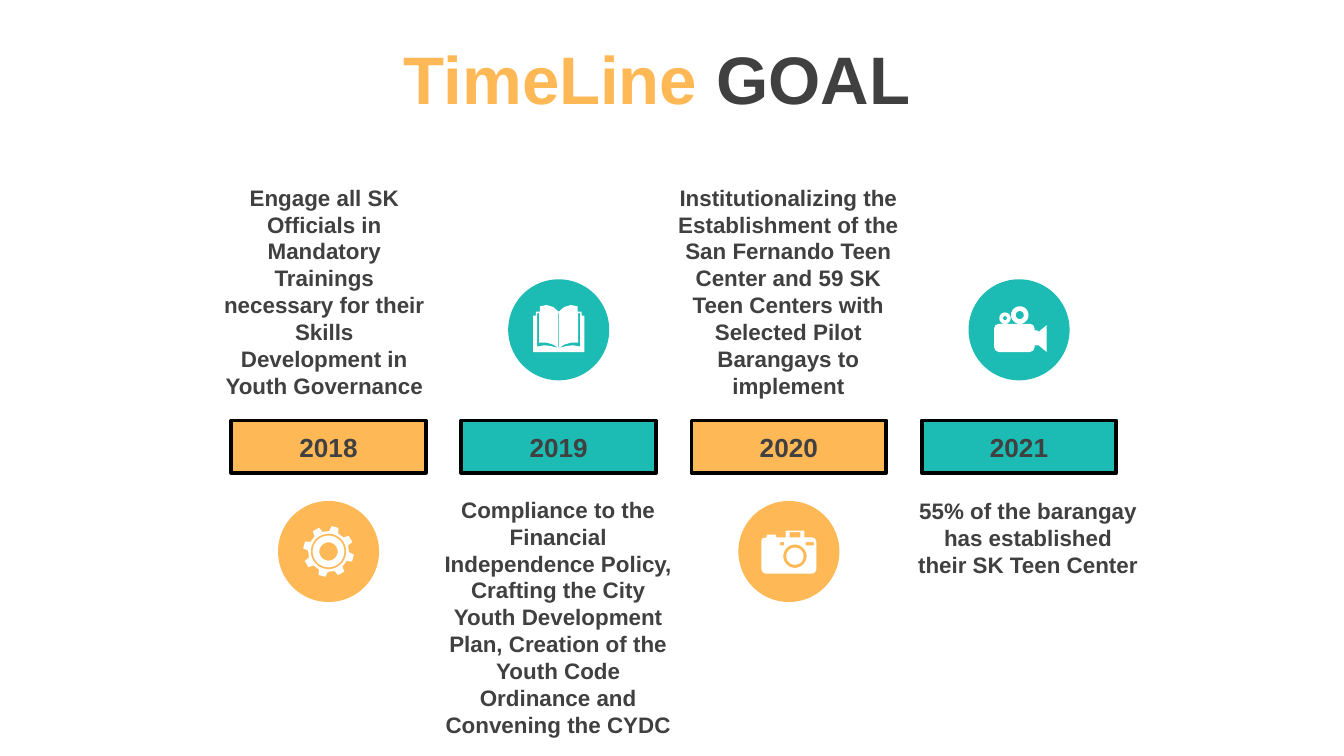
from math import cos, radians, sin

from pptx import Presentation
from pptx.dml.color import RGBColor
from pptx.enum.shapes import MSO_SHAPE
from pptx.enum.text import MSO_ANCHOR, MSO_AUTO_SIZE, PP_ALIGN
from pptx.util import Cm, Pt

RECTANGLE, OVAL = MSO_SHAPE.RECTANGLE, MSO_SHAPE.OVAL
TOP, MIDDLE = MSO_ANCHOR.TOP, MSO_ANCHOR.MIDDLE
CENTER = PP_ALIGN.CENTER
FIT_SHAPE = MSO_AUTO_SIZE.SHAPE_TO_FIT_TEXT

ORANGE = RGBColor(0xFE, 0xB8, 0x56)
TEAL = RGBColor(0x1C, 0xBB, 0xB4)
GRAY = RGBColor(0x40, 0x40, 0x40)
BLACK = RGBColor(0, 0, 0)
WHITE = RGBColor(0xFF, 0xFF, 0xFF)

# Column grid, in cm
FIRST_LEFT, COLUMN_STEP = 4.37, 4.35
YEAR_TOP, YEAR_WIDTH, YEAR_HEIGHT = 7.95, 3.68, 0.99
DISC_SIZE, UPPER_DISC_TOP, LOWER_DISC_TOP = 1.91, 5.28, 9.47
ICON_UNIT = 0.0254  # icon outlines count in this unit from the disc centre


def write_text(text_frame, runs, size=12, anchor=TOP):
    """Write one centred bold paragraph from (text, color) pairs."""
    text_frame.word_wrap = True
    text_frame.vertical_anchor = anchor
    paragraph = text_frame.paragraphs[0]
    paragraph.alignment = CENTER
    for text, color in runs:
        run = paragraph.add_run()
        run.text = text
        run.font.name = "Arial"
        run.font.size = Pt(size)
        run.font.bold = True
        run.font.color.rgb = color


def paint(shape, fill, line=None):
    shape.shadow.inherit = False
    shape.fill.solid()
    shape.fill.fore_color.rgb = fill
    if line is None:
        shape.line.fill.background()
    else:
        shape.line.color.rgb = line
        shape.line.width = Pt(2)


def add_title(slide):
    title = slide.shapes.title
    title.left, title.top = Cm(-0.28), Cm(0.38)
    title.width, title.height = Cm(25.4), Cm(2.16)
    write_text(title.text_frame, [("TimeLine", ORANGE), (" GOAL", GRAY)],
               size=36, anchor=MIDDLE)


def add_year(slide, left, year, color):
    shape = slide.shapes.add_shape(RECTANGLE, Cm(left), Cm(YEAR_TOP),
                                   Cm(YEAR_WIDTH), Cm(YEAR_HEIGHT))
    paint(shape, color, line=BLACK)
    write_text(shape.text_frame, [(year, GRAY)], size=14, anchor=MIDDLE)


def add_goal(slide, text, left, top, width, height):
    box = slide.shapes.add_textbox(Cm(left), Cm(top), Cm(width), Cm(height))
    write_text(box.text_frame, [(text, GRAY)])
    box.text_frame.auto_size = FIT_SHAPE


def add_icon(slide, center_x, top, color, contours):
    """Add a disc with a white icon; nested contours become holes."""
    disc = slide.shapes.add_shape(OVAL, Cm(center_x - DISC_SIZE / 2), Cm(top),
                                  Cm(DISC_SIZE), Cm(DISC_SIZE))
    paint(disc, color)
    builder = None
    for contour in contours:
        points = [(Cm(x * ICON_UNIT), Cm(y * ICON_UNIT)) for x, y in contour]
        if builder is None:
            builder = slide.shapes.build_freeform(*points[0])
        else:
            builder.move_to(*points[0])
        builder.add_line_segments(points[1:], close=True)
    icon = builder.convert_to_shape(Cm(center_x), Cm(top + DISC_SIZE / 2))
    paint(icon, WHITE)


# Icon outlines
def circle(x, y, radius):
    return [(x + radius * cos(radians(angle)), y + radius * sin(radians(angle)))
            for angle in range(0, 360, 10)]


def box(left, top, right, bottom):
    return [(left, top), (right, top), (right, bottom), (left, bottom)]


def mirrored(points):
    return [(-x, y) for x, y in reversed(points)]


def gear():
    profile = [(-13, 15.2), (-8, 19), (8, 19), (13, 15.2)]
    teeth = [(radius * cos(radians(tooth + offset)),
              radius * sin(radians(tooth + offset)))
             for tooth in range(-75, 285, 45) for offset, radius in profile]
    return [teeth] + [circle(0, 0, radius) for radius in (13.2, 11.8, 6.8)]


def book():
    half = [(0, -13.5), (4, -17), (9, -18.5), (14, -17.5), (14, -13.5),
            (17, -13.5), (17, -10.5), (19, -10.5), (19, 16.5)]
    page_edge = [(0.5, 13.5), (6, 12), (11, 11.5), (16, 12.5), (16, -12.5),
                 (14.5, -12.5), (14.5, 9.5), (9, 9.5), (4, 11)]
    spine = box(-0.3, -12.5, 0.3, 13)
    return [half + mirrored(half), page_edge, mirrored(page_edge), spine]


def camera():
    body = [(-20.5, -8), (-19.5, -10), (-16.5, -10.5), (-16.5, -12.5),
            (-9.5, -12.5), (-9.5, -10.5), (-2.5, -10.5), (-2.5, -15.5),
            (11.5, -15.5), (11.5, -10.5), (17.5, -10.5), (19.5, -9.5),
            (20.5, -7), (20.5, 13), (19.5, 15.5), (17.5, 16.5),
            (-17.5, 16.5), (-19.5, 15.5), (-20.5, 13)]
    return [body, circle(4.5, 3.5, 8.7), circle(4.5, 3.5, 6.4),
            box(0.5, -14.5, 8.5, -10.5), box(-6.5, -7, -3.5, -4.5),
            box(12.5, -7, 18.5, -4.5)]


def video_camera():
    body = [(-18.5, -1.5), (-17.5, -3.5), (-15, -4.5), (8, -4.5),
            (10.5, -3.5), (11.5, -1), (11.5, 0.5), (13.5, 0.5), (14.5, 1.5),
            (20.5, -3.5), (20.5, 16.5), (14.5, 11.5), (11.5, 11.5),
            (11.5, 13), (10.5, 15.5), (8, 16.5), (-15, 16.5),
            (-17.5, 15.5), (-18.5, 13)]
    return [body, circle(-10.5, -8.7, 4.2), circle(-10.5, -8.7, 1.5),
            circle(0.5, -11, 6.5), circle(0.5, -11, 3)]


# Year, icon outline, goal text, goal box (left, top, width, height)
GOALS = [
    ("2018", gear,
     "Engage all SK Officials in Mandatory Trainings necessary for their "
     "Skills Development in Youth Governance",
     (3.96, 3.35, 4.34, 4.37)),
    ("2019", book,
     "Compliance to the Financial Independence Policy, Crafting the City "
     "Youth Development Plan, Creation of the Youth Code Ordinance and "
     "Convening the CYDC",
     (8.1, 9.25, 4.9, 4.88)),
    ("2020", camera,
     "Institutionalizing the Establishment of the San Fernando Teen Center "
     "and 59 SK Teen Centers with Selected Pilot Barangays to implement",
     (12.5, 3.35, 4.8, 4.37)),
    ("2021", video_camera,
     "55% of the barangay has established their SK Teen Center",
     (17.09, 9.28, 4.68, 1.8)),
]


def main():
    presentation = Presentation()
    presentation.slide_width, presentation.slide_height = Cm(25.4), Cm(14.29)
    slide = presentation.slides.add_slide(presentation.slide_layouts[5])
    add_title(slide)

    # Goals alternate above and below the row of years
    for index, (year, outline, text, frame) in enumerate(GOALS):
        left = FIRST_LEFT + index * COLUMN_STEP
        color, disc_top = ((ORANGE, LOWER_DISC_TOP) if index % 2 == 0
                           else (TEAL, UPPER_DISC_TOP))
        add_year(slide, left, year, color)
        add_icon(slide, left + YEAR_WIDTH / 2, disc_top, color, outline())
        add_goal(slide, text, *frame)

    presentation.save("out.pptx")


if __name__ == "__main__":
    main()
